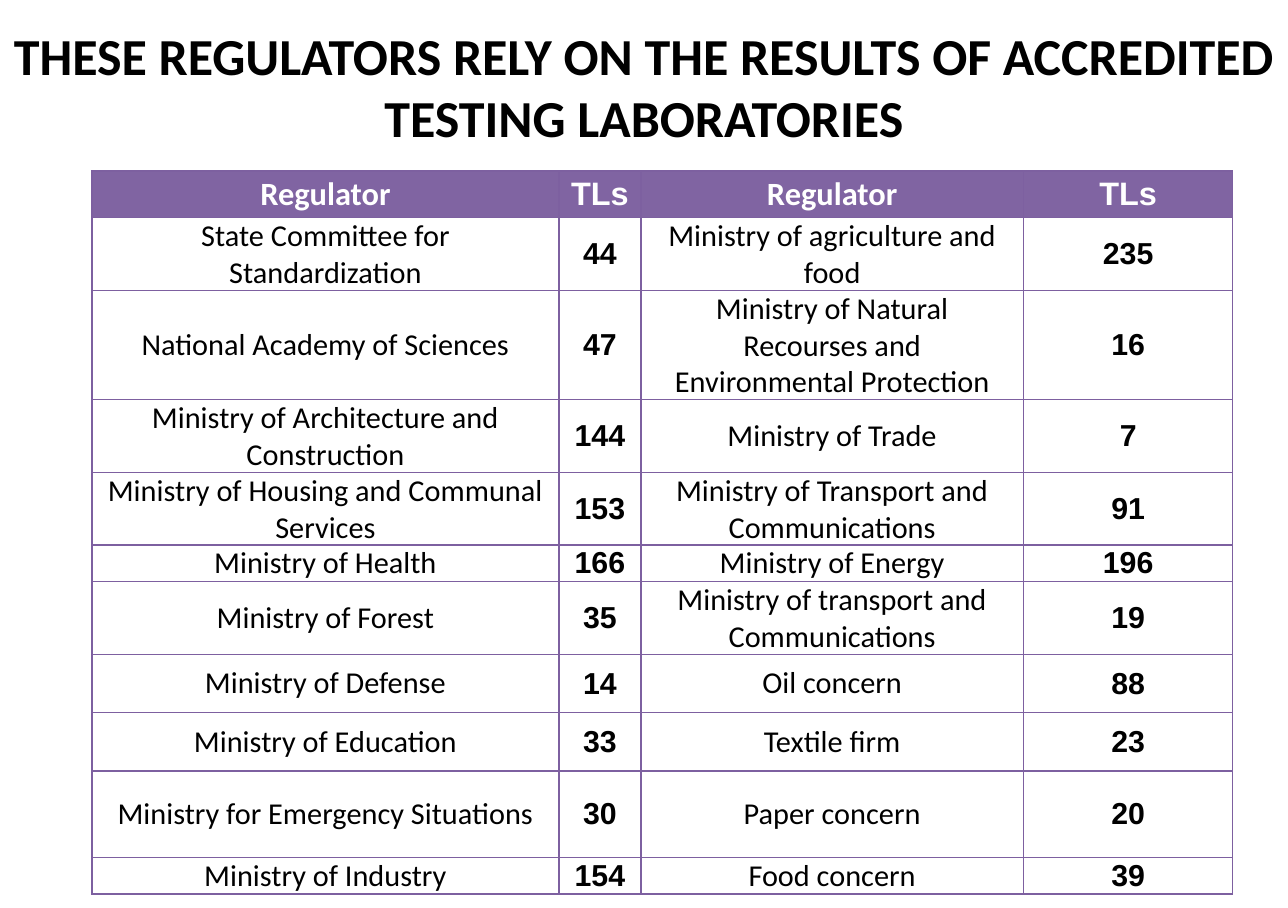
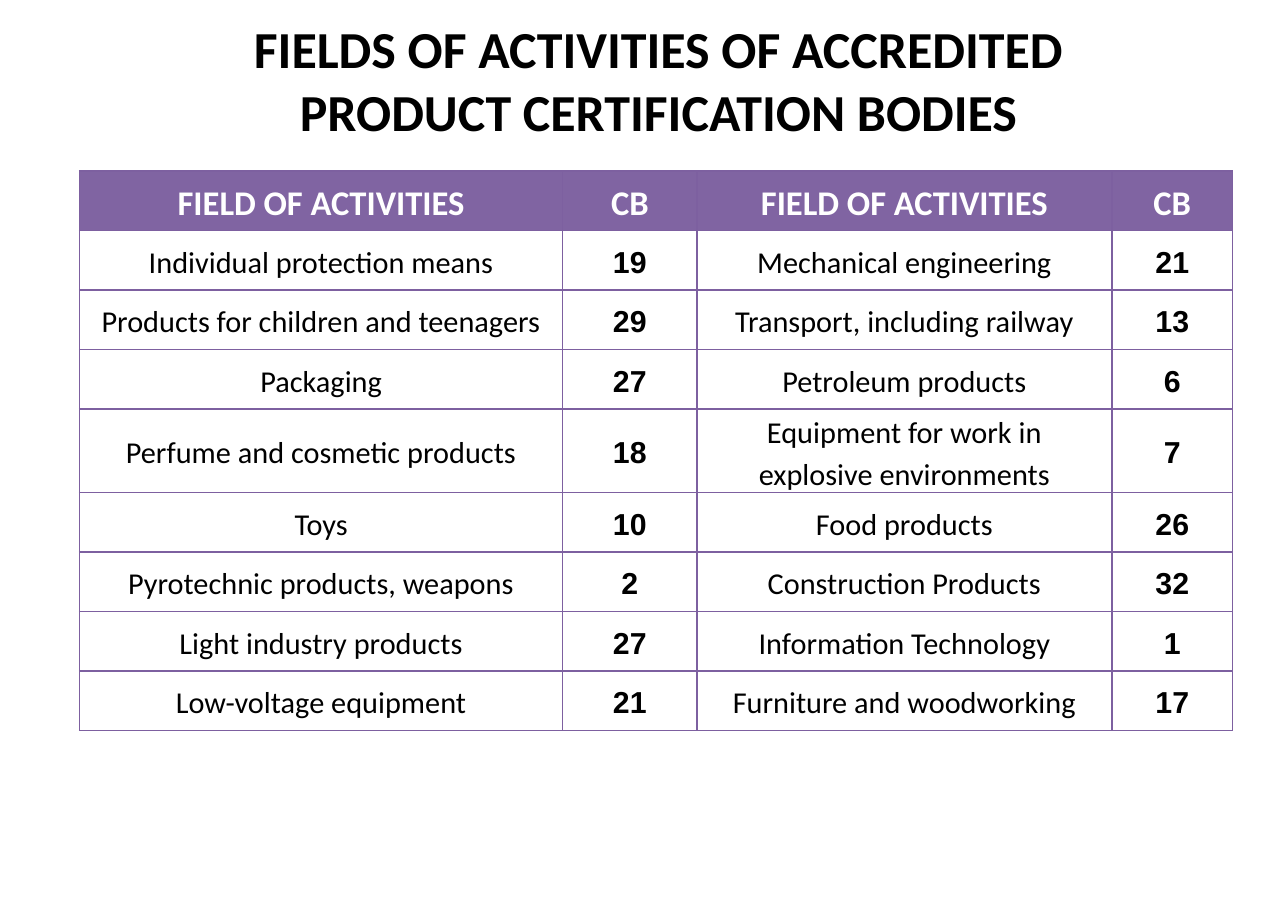
from lxml.etree import SubElement
from pptx import Presentation
from pptx.dml.color import RGBColor
from pptx.enum.text import MSO_ANCHOR as Anchor, PP_ALIGN as Align
from pptx.oxml.ns import qn
from pptx.util import Pt

BLACK = RGBColor(0x00, 0x00, 0x00)
WHITE = RGBColor(0xFF, 0xFF, 0xFF)
PURPLE = RGBColor(0x80, 0x64, 0xA2)
BORDER = RGBColor(0x7D, 0x60, 0xA0)
NAME_FONT, NUMBER_FONT = "Calibri", "Arial"
TABLE_TOP = 79
INSET = 5

# Content: each table row holds two name and count pairs
SLIDES = [
    {
        "title": "THESE REGULATORS RELY ON THE RESULTS OF ACCREDITED TESTING LABORATORIES",
        "title_box": (0, 0, 595.5, 71.3),
        "left": 42.5,
        "columns": (216, 37.8, 177, 96.7),
        "heights": (21.6, 32, 32, 32, 32, 16, 32, 27, 27, 40, 16),
        "header": ("Regulator", "TLs", "Regulator", "TLs"),
        "header_size": 15,
        "header_number_font": NUMBER_FONT,
        "line_spacing": 1.0,
        "rows": [
            ("State Committee for Standardization", 44, "Ministry of agriculture and food", 235),
            ("National Academy of Sciences", 47,
             "Ministry of Natural Recourses and Environmental Protection", 16),
            ("Ministry of Architecture and Construction", 144, "Ministry of Trade", 7),
            ("Ministry of Housing and Communal Services", 153,
             "Ministry of Transport and Communications", 91),
            ("Ministry of Health", 166, "Ministry of Energy", 196),
            ("Ministry of Forest", 35, "Ministry of transport and Communications", 19),
            ("Ministry of Defense", 14, "Oil concern", 88),
            ("Ministry of Education", 33, "Textile firm", 23),
            ("Ministry for Emergency Situations", 30, "Paper concern", 20),
            ("Ministry of Industry", 154, "Food concern", 39),
        ],
    },
    {
        "title": "FIELDS OF ACTIVITIES OF ACCREDITED\vPRODUCT CERTIFICATION BODIES",
        "title_box": (34.5, 28, 540, 40.4),
        "left": 36.8,
        "columns": (223.4, 62, 192, 55.7),
        "heights": (27.5,) * 4 + (34.5,) + (27.5,) * 4,
        "header": ("FIELD OF ACTIVITIES", "CB", "FIELD OF ACTIVITIES", "CB"),
        "header_size": 16,
        "header_number_font": NAME_FONT,
        "line_spacing": 1.15,
        "rows": [
            ("Individual protection means", 19, "Mechanical engineering", 21),
            ("Products for children and teenagers", 29, "Transport, including railway", 13),
            ("Packaging", 27, "Petroleum products", 6),
            ("Perfume and cosmetic products", 18, "Equipment for work in explosive environments", 7),
            ("Toys", 10, "Food products", 26),
            ("Pyrotechnic products, weapons", 2, "Construction Products", 32),
            ("Light industry products", 27, "Information Technology", 1),
            ("Low-voltage equipment", 21, "Furniture and woodworking", 17),
        ],
    },
]


def style(para, font_name, size, color, bold):
    para.alignment = Align.CENTER
    for span in para.runs:
        font = span.font
        font.name, font.size, font.bold = font_name, Pt(size), bold
        font.color.rgb = color


def add_title(page, text, place):
    box = page.shapes.add_textbox(*(Pt(value) for value in place))
    frame = box.text_frame
    frame.word_wrap = True
    frame.vertical_anchor = Anchor.BOTTOM
    frame.margin_left = frame.margin_right = Pt(INSET)
    frame.margin_top = frame.margin_bottom = Pt(3)
    para = frame.paragraphs[0]
    para.text = text
    style(para, NAME_FONT, 24, BLACK, True)


def add_borders(cell):
    properties = cell._tc.get_or_add_tcPr()
    for side in ("a:lnL", "a:lnR", "a:lnT", "a:lnB"):
        line = SubElement(properties, qn(side), w=str(Pt(0.75)))
        fill = SubElement(line, qn("a:solidFill"))
        SubElement(fill, qn("a:srgbClr"), val=str(BORDER))


def fill_cell(cell, text, line_spacing, is_header, *text_style):
    cell.margin_left = cell.margin_right = Pt(INSET)
    cell.margin_top = cell.margin_bottom = 0
    cell.vertical_anchor = Anchor.MIDDLE
    add_borders(cell)
    if is_header:
        cell.fill.solid()
        cell.fill.fore_color.rgb = PURPLE
    else:
        cell.fill.background()
    para = cell.text_frame.paragraphs[0]
    para.text = str(text)
    para.line_spacing = line_spacing
    style(para, *text_style)


def add_count_table(page, content):
    rows = [content["header"], *content["rows"]]
    columns, heights = content["columns"], content["heights"]
    table = page.shapes.add_table(
        len(rows), len(columns), Pt(content["left"]), Pt(TABLE_TOP),
        Pt(sum(columns)), Pt(sum(heights))).table
    table.first_row = table.horz_banding = False
    for column, width in zip(table.columns, columns):
        column.width = Pt(width)
    for row, height in zip(table.rows, heights):
        row.height = Pt(height)

    for r, values in enumerate(rows):
        is_header = r == 0
        number_font = content["header_number_font"] if is_header else NUMBER_FONT
        size = content["header_size"] if is_header else 14
        color = WHITE if is_header else BLACK
        for c, value in enumerate(values):
            is_number = c % 2 == 1
            fill_cell(table.cell(r, c), value, content["line_spacing"], is_header,
                      number_font if is_number else NAME_FONT, size, color,
                      is_header or is_number)


def main():
    deck = Presentation()
    deck.slide_width, deck.slide_height = Pt(595.5), Pt(419.75)
    for content in SLIDES:
        page = deck.slides.add_slide(deck.slide_layouts[6])
        add_title(page, content["title"], content["title_box"])
        add_count_table(page, content)
    deck.save("out.pptx")


if __name__ == "__main__":
    main()
